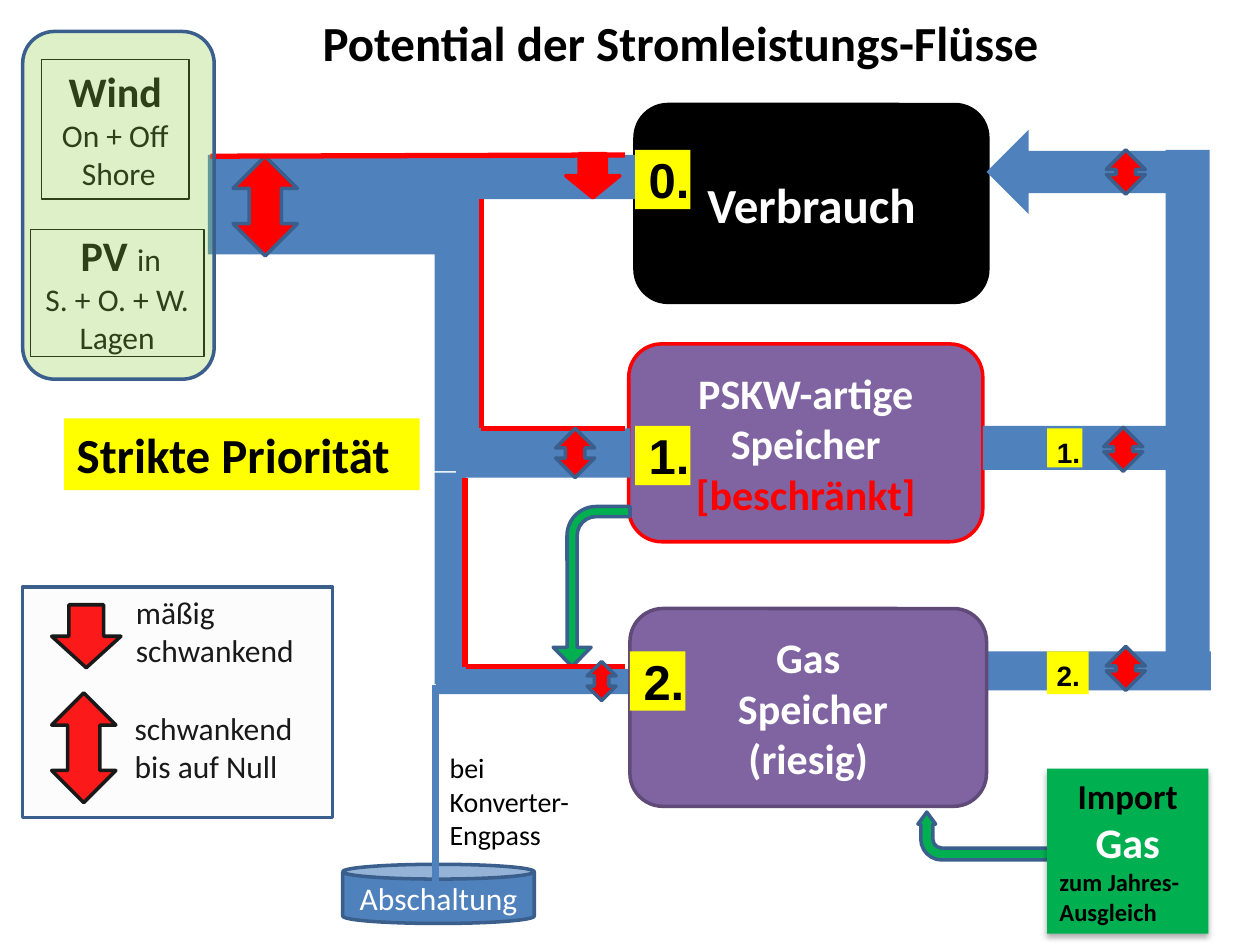
"""Build a slide on the potential of power flows between sources, storage and load."""
from dataclasses import dataclass

from lxml.etree import SubElement
from pptx import Presentation
from pptx.dml.color import RGBColor
from pptx.enum.shapes import MSO_CONNECTOR, MSO_SHAPE
from pptx.enum.text import MSO_ANCHOR, PP_ALIGN
from pptx.oxml.ns import qn
from pptx.util import Inches, Pt

COLORS = {
    "flow": "4F81BD", "edge": "3A5F8C", "red": "FF0000", "black": "000000",
    "white": "FFFFFF", "yellow": "FFFF00", "storage": "8064A2",
    "storage_edge": "5F4A78", "source": "92D050", "gas": "00B050", "legend": "EAEAEA",
}


@dataclass
class Span:
    text: str
    size: float = 18
    color: str = "black"
    bold: bool = False
    font: str = "Calibri"


@dataclass
class Box:
    left: float
    top: float
    width: float
    height: float
    fill: str = ""
    line: str = ""
    line_width: float = 2
    kind: MSO_SHAPE = MSO_SHAPE.RECTANGLE
    alpha: int = 100
    rotation: int = 0
    adjust: tuple = ()


def color_of(name):
    return RGBColor.from_string(COLORS[name])


def write_span(para, text: str, *, size=18, color="black", bold=False, font="Calibri"):
    run = para.add_run()
    run.text = text
    run.font.size, run.font.bold, run.font.name = Pt(size), bold, font
    run.font.color.rgb = color_of(color)


def write_text(shape, paragraphs, *, align=PP_ALIGN.LEFT, anchor=MSO_ANCHOR.TOP, inset=None):
    """Fill a shape with paragraphs, each a list of spans."""
    frame = shape.text_frame
    frame.word_wrap, frame.vertical_anchor = True, anchor
    if inset is not None:
        frame.margin_left = frame.margin_right = Inches(inset)
        frame.margin_top = frame.margin_bottom = Inches(inset)
    for index, spans in enumerate(paragraphs):
        para = frame.add_paragraph() if index else frame.paragraphs[0]
        para.alignment = align
        for span in spans:
            write_span(para, span.text, size=span.size, color=span.color,
                       bold=span.bold, font=span.font)


def draw_box(page, box: Box):
    shape = page.shapes.add_shape(box.kind, Inches(box.left), Inches(box.top),
                                  Inches(box.width), Inches(box.height))
    shape.shadow.inherit = False
    shape.rotation = box.rotation
    for index, value in enumerate(box.adjust):
        shape.adjustments[index] = value
    if box.fill:
        shape.fill.solid()
        shape.fill.fore_color.rgb = color_of(box.fill)
    else:
        shape.fill.background()
    if box.alpha < 100:
        tint = shape._element.spPr.find(qn("a:solidFill"))[0]
        SubElement(tint, qn("a:alpha"), val=str(box.alpha * 1000))
    if box.line:
        shape.line.color.rgb = color_of(box.line)
        shape.line.width = Pt(box.line_width)
    else:
        shape.line.fill.background()
    return shape


def draw_line(page, start: tuple, end: tuple, color="red", width=3):
    line = page.shapes.add_connector(MSO_CONNECTOR.STRAIGHT, *map(Inches, start + end))
    line.line.color.rgb = color_of(color)
    line.line.width = Pt(width)
    SubElement(line._element.spPr, qn("a:effectLst"))


def draw_bars(page, *bars: tuple):
    for bar in bars:
        draw_box(page, Box(*bar, "flow"))


def draw_swing(page, left, top, width=0.31, height=0.35, line="edge"):
    draw_box(page, Box(left, top, width, height, "red", line, kind=MSO_SHAPE.UP_DOWN_ARROW))


def draw_rank(page, left, top, width, height, *spans: Span):
    write_text(draw_box(page, Box(left, top, width, height, "yellow")), [spans], inset=0)


def draw_station(page, box: Box, paragraphs):
    box.kind = MSO_SHAPE.ROUNDED_RECTANGLE
    write_text(draw_box(page, box), paragraphs, align=PP_ALIGN.CENTER, anchor=MSO_ANCHOR.MIDDLE)


def draw_note(page, left, top, width, height, lines, size=18):
    note = page.shapes.add_textbox(*map(Inches, (left, top, width, height)))
    write_text(note, [[Span(text, size)] for text in lines])


def draw_sources(page):
    solar = draw_box(page, Box(0.24, 1.82, 1.38, 1.01, line="black", line_width=0.75))
    write_text(solar, [[Span(" "), Span("PV ", 24, bold=True), Span("in")],
                       [Span("S. + O. + W.")], [Span("Lagen")]],
               align=PP_ALIGN.CENTER, inset=0)
    wind = draw_box(page, Box(0.33, 0.47, 1.17, 1.11, line="black", line_width=0.75))
    write_text(wind, [[Span("Wind", 24, bold=True)], [Span("On + Off")], [Span(" Shore")]],
               align=PP_ALIGN.CENTER)


def draw_legend(page):
    draw_note(page, 0.97, 5.58, 1.65, 0.78, ["schwankend", "bis auf Null"])
    draw_box(page, Box(0.41, 4.8, 0.55, 0.5, "red", "black", kind=MSO_SHAPE.DOWN_ARROW))
    draw_note(page, 0.98, 4.66, 1.65, 0.78, ["mäßig", "schwankend"])
    draw_swing(page, 0.41, 5.5, 0.51, 0.87, "black")
    draw_box(page, Box(0.18, 4.66, 2.46, 1.83, "legend", "edge", alpha=11))


def draw_import(page):
    draw_box(page, Box(7.67, 6.06, 0.38, 1.15, "gas", "edge", kind=MSO_SHAPE.BENT_ARROW,
                       rotation=270, adjust=(0.25, 0.186, 0.25, 0.438)))
    card = draw_box(page, Box(8.31, 6.1, 1.28, 1.31, "gas"))
    write_text(card, [[Span("Import", 20, bold=True)], [Span("Gas", 24, "white", True)],
                      [Span("zum Jahres- Ausgleich", 14, bold=True)]], align=PP_ALIGN.CENTER)
    card.text_frame.paragraphs[-1].alignment = PP_ALIGN.LEFT
    effects = card._element.spPr.find(qn("a:effectLst"))
    shadow = SubElement(effects, qn("a:outerShdw"), blurRad=str(Pt(3.5)), dist=str(Pt(2.2)),
                        dir="5400000", rotWithShape="0")
    tint = SubElement(shadow, qn("a:srgbClr"), val=COLORS["black"])
    SubElement(tint, qn("a:alpha"), val="32000")


def draw_shutdown(page):
    can = draw_box(page, Box(2.72, 6.86, 1.52, 0.47, "flow", "edge", kind=MSO_SHAPE.CAN))
    write_text(can, [[Span("Abschaltung", color="white")]],
               align=PP_ALIGN.CENTER, anchor=MSO_ANCHOR.MIDDLE)
    draw_line(page, (3.46, 5.44), (3.46, 7.01), "flow", 4)
    draw_line(page, (3.5, 5.45), (3.86, 5.45), "flow", 4)


def main():
    deck = Presentation()
    deck.slide_width, deck.slide_height = Inches(10), Inches(7.5)
    page = deck.slides.add_slide(deck.slide_layouts[5])
    title = page.shapes.title
    title.left, title.top, title.width, title.height = map(Inches, (2.46, 0.05, 6.61, 0.57))
    write_text(title, [[Span("Potential der Stromleistungs-Flüsse", 28, bold=True)]])

    draw_bars(page, (3.46, 5.31, 1.54, 0.2), (7.8, 5.17, 1.81, 0.31))
    draw_station(page, Box(5.04, 0.83, 2.8, 1.57, "black", "black"),
                 [[Span("Verbrauch", 28, "white", True)]])
    draw_sources(page)
    draw_station(page, Box(4.99, 2.73, 2.81, 1.57, "storage", "red"),
                 [[Span("PSKW-artige Speicher", 24, "white", True)],
                  [Span("[beschränkt]", 24, "red", True)]])
    draw_bars(page, (1.65, 1.23, 2.17, 0.79), (3.45, 2.01, 0.39, 1.73),
              (3.62, 1.23, 1.42, 0.35), (3.62, 3.4, 1.38, 0.39))
    draw_swing(page, 1.85, 1.24, 0.51, 0.79)
    draw_line(page, (1.67, 1.24), (4.96, 1.23))
    draw_box(page, Box(4.49, 1.22, 0.43, 0.35, "red", "red", kind=MSO_SHAPE.DOWN_ARROW))
    draw_station(page, Box(5, 4.83, 2.83, 1.57, "storage", "storage_edge"),
                 [[Span(text, 24, "white", True)] for text in ("Gas", " Speicher", "(riesig)")])
    for rank, (left, top) in enumerate([(5.04, 1.19), (5.04, 3.38), (5, 5.17)]):
        draw_rank(page, left, top, 0.44, 0.47, Span(f" {rank}.", 28, bold=True, font="Arial"))
    draw_bars(page, (3.45, 3.75, 0.25, 1.68))
    draw_line(page, (3.82, 3.4), (3.82, 1.58))
    draw_line(page, (3.82, 3.4), (4.96, 3.4))
    draw_box(page, Box(0.18, 0.25, 1.52, 2.76, "source", "edge", alpha=31,
                       kind=MSO_SHAPE.ROUNDED_RECTANGLE))
    draw_swing(page, 4.41, 3.4, height=0.39)
    draw_shutdown(page)
    overflow = draw_box(page, Box(4.06, 4.35, 1.27, 0.61, "gas", "edge", rotation=90,
                                  kind=MSO_SHAPE.BENT_ARROW, adjust=(0.132, 0.247, 0.25, 0.378)))
    overflow._element.spPr.find(qn("a:xfrm")).set("flipV", "1")
    draw_note(page, 3.47, 5.91, 1.25, 0.91, ["bei", "Konverter- Engpass"], 16)
    draw_line(page, (3.69, 5.29), (3.69, 3.79))
    draw_line(page, (3.7, 5.29), (4.96, 5.29))
    draw_bars(page, (7.8, 3.38, 1.77, 0.35))
    for label, top, width, height in [("1.", 3.4, 0.28, 0.31), ("2.", 5.17, 0.33, 0.34)]:
        draw_rank(page, 8.31, top, width, height, Span(" ", 20, bold=True, font="Arial"),
                  Span(label, 16, bold=True, font="Arial"))
    priority = draw_box(page, Box(0.51, 3.32, 2.82, 0.57, "yellow"))
    write_text(priority, [[Span("Strikte Priorität", 28, bold=True)]])
    draw_legend(page)
    draw_import(page)
    draw_bars(page, (9.25, 1.19, 0.35, 4.25))
    draw_box(page, Box(7.83, 1.03, 1.43, 0.67, "flow", kind=MSO_SHAPE.LEFT_ARROW))
    for left, top in [(8.76, 3.39), (8.78, 5.13), (8.78, 1.19)]:
        draw_swing(page, left, top)
    draw_swing(page, 4.66, 5.25, 0.23, 0.31)
    deck.save("out.pptx")


if __name__ == "__main__":
    main()
